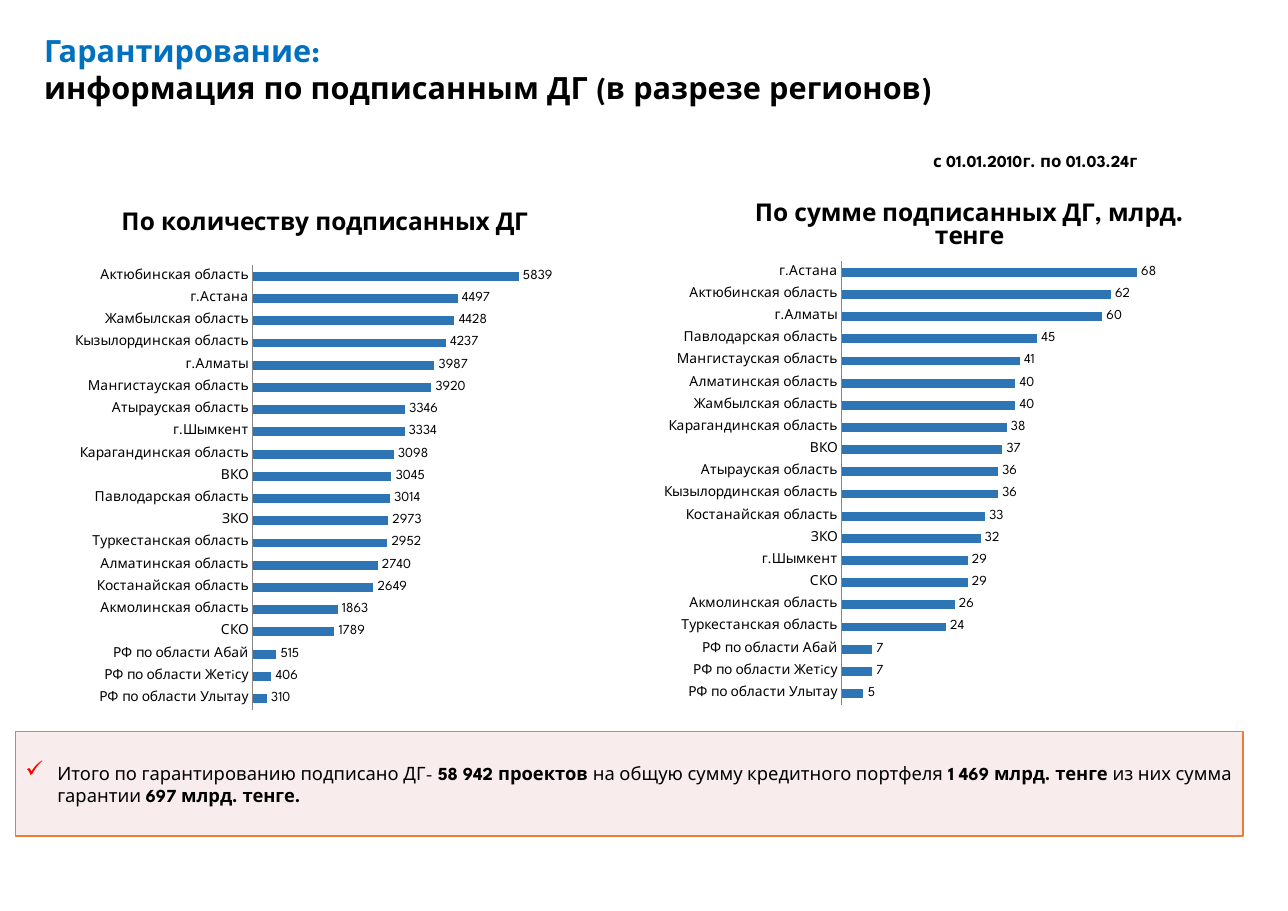
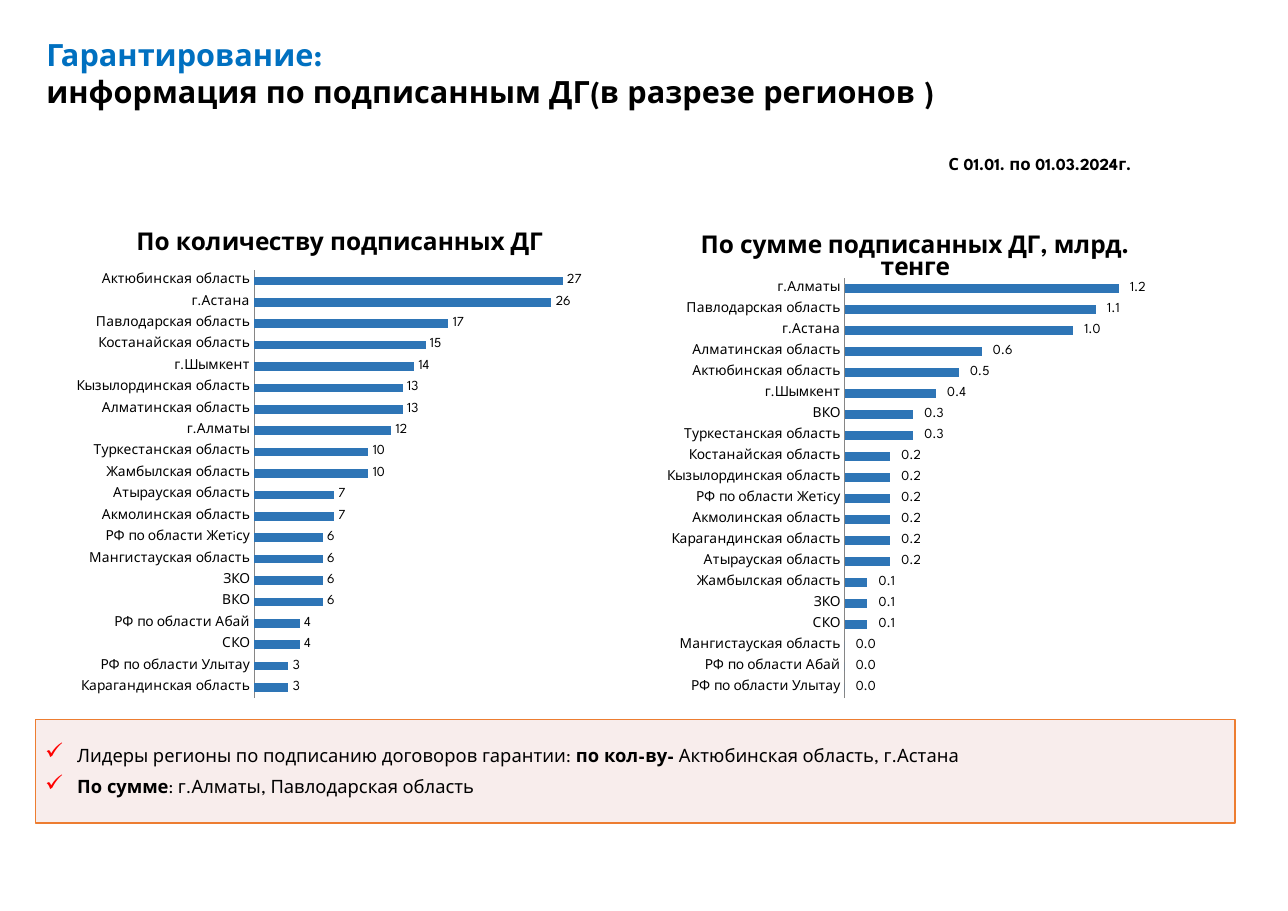
from dataclasses import dataclass

from lxml.etree import SubElement
from pptx import Presentation
from pptx.chart.data import CategoryChartData
from pptx.dml.color import RGBColor
from pptx.enum.chart import XL_CHART_TYPE as ChartType
from pptx.enum.chart import XL_LABEL_POSITION as LabelPosition
from pptx.enum.chart import XL_TICK_MARK as TickMark
from pptx.enum.shapes import MSO_SHAPE as Preset
from pptx.enum.text import MSO_ANCHOR as Anchor
from pptx.enum.text import MSO_AUTO_SIZE as AutoSize
from pptx.enum.text import PP_ALIGN as Align
from pptx.oxml import parse_xml
from pptx.oxml.ns import nsdecls, qn
from pptx.util import Inches, Pt


@dataclass(frozen=True)
class Theme:
    font: str = "League Spartan"
    chart_font: str = "Calibri"
    black: RGBColor = RGBColor(0x00, 0x00, 0x00)
    blue: RGBColor = RGBColor(0x00, 0x70, 0xC0)
    bar: RGBColor = RGBColor(0x2E, 0x75, 0xB6)
    axis: RGBColor = RGBColor(0x86, 0x86, 0x86)
    band: RGBColor = RGBColor(0xF2, 0xDC, 0xDB)
    border: RGBColor = RGBColor(0xED, 0x7D, 0x31)
    check: str = "FF0000"
    title_size: int = 20
    chart_title_size: int = 16
    body_size: int = 12
    period_size: int = 11
    label_size: int = 9


THEME = Theme()


@dataclass(frozen=True)
class Area:
    left: float
    top: float
    width: float
    height: float

    def inches(self) -> tuple:
        return tuple(Inches(n) for n in (self.left, self.top, self.width, self.height))


@dataclass(frozen=True)
class RegionChart:
    title: str
    area: Area
    plot: Area  # fractions of the chart
    maximum: float
    regions: dict  # from top to bottom
    number_format: str = "General"
    title_at: tuple = ()  # fractions of the chart


@dataclass(frozen=True)
class RegionPage:
    subtitle: str
    title_area: Area
    period: str
    period_area: Area
    charts: tuple
    summary_area: Area
    summary: tuple  # paragraphs of (text, bold)


COUNT_TITLE = "По количеству подписанных ДГ"
SUM_TITLE = "По сумме подписанных ДГ, млрд. тенге"

# Content
PAGES = (
    RegionPage(
        subtitle="информация по подписанным ДГ (в разрезе регионов)",
        title_area=Area(0.3, 0.24, 8.39, 0.77),
        period="с 01.01.2010г. по 01.03.24г",
        period_area=Area(8.37, 1.32, 2.17, 0.29),
        charts=(
            RegionChart(
                COUNT_TITLE, Area(0.22, 1.72, 5.46, 4.92),
                Area(0.38, 0.14, 0.53, 0.82), 7000,
                {
                    "Актюбинская область": 5839, "г.Астана": 4497,
                    "Жамбылская область": 4428, "Кызылординская область": 4237,
                    "г.Алматы": 3987, "Мангистауская область": 3920,
                    "Атырауская область": 3346, "г.Шымкент": 3334,
                    "Карагандинская область": 3098, "ВКО": 3045,
                    "Павлодарская область": 3014, "ЗКО": 2973,
                    "Туркестанская область": 2952, "Алматинская область": 2740,
                    "Костанайская область": 2649, "Акмолинская область": 1863,
                    "СКО": 1789, "РФ по области Абай": 515,
                    "РФ по области Жетiсу": 406, "РФ по области Улытау": 310,
                },
            ),
            RegionChart(
                SUM_TITLE, Area(5.76, 1.79, 5.53, 4.85),
                Area(0.34, 0.12, 0.57, 0.83), 80,
                {
                    "г.Астана": 68, "Актюбинская область": 62,
                    "г.Алматы": 60, "Павлодарская область": 45,
                    "Мангистауская область": 41, "Алматинская область": 40,
                    "Жамбылская область": 40, "Карагандинская область": 38,
                    "ВКО": 37, "Атырауская область": 36,
                    "Кызылординская область": 36, "Костанайская область": 33,
                    "ЗКО": 32, "г.Шымкент": 29,
                    "СКО": 29, "Акмолинская область": 26,
                    "Туркестанская область": 24, "РФ по области Абай": 7,
                    "РФ по области Жетiсу": 7, "РФ по области Улытау": 5,
                },
                "#,##0", (0.19, 0),
            ),
        ),
        summary_area=Area(0.14, 6.64, 11.14, 0.95),
        summary=(
            (
                ("Итого по гарантированию подписано ДГ- ", False),
                ("58 942 проектов ", True),
                ("на общую сумму кредитного портфеля ", False),
                ("1 469 млрд. тенге ", True),
                ("из них сумма гарантии ", False),
                ("697 млрд. тенге.", True),
            ),
        ),
    ),
    RegionPage(
        subtitle="информация по подписанным ДГ(в разрезе регионов )",
        title_area=Area(0.32, 0.28, 8.3, 0.77),
        period="С 01.01. по 01.03.2024г.",
        period_area=Area(8.51, 1.35, 1.96, 0.29),
        charts=(
            RegionChart(
                COUNT_TITLE, Area(0.4, 1.91, 5.37, 4.6),
                Area(0.355, 0.118, 0.58, 0.845), 30,
                {
                    "Актюбинская область": 27, "г.Астана": 26,
                    "Павлодарская область": 17, "Костанайская область": 15,
                    "г.Шымкент": 14, "Кызылординская область": 13,
                    "Алматинская область": 13, "г.Алматы": 12,
                    "Туркестанская область": 10, "Жамбылская область": 10,
                    "Атырауская область": 7, "Акмолинская область": 7,
                    "РФ по области Жетiсу": 6, "Мангистауская область": 6,
                    "ЗКО": 6, "ВКО": 6,
                    "РФ по области Абай": 4, "СКО": 4,
                    "РФ по области Улытау": 3, "Карагандинская область": 3,
                },
            ),
            RegionChart(
                SUM_TITLE, Area(5.4, 1.93, 5.81, 4.57),
                Area(0.39, 0.13, 0.5, 0.835), 1.4,
                {
                    "г.Алматы": 1.2, "Павлодарская область": 1.1,
                    "г.Астана": 1.0, "Алматинская область": 0.6,
                    "Актюбинская область": 0.5, "г.Шымкент": 0.4,
                    "ВКО": 0.3, "Туркестанская область": 0.3,
                    "Костанайская область": 0.2, "Кызылординская область": 0.2,
                    "РФ по области Жетiсу": 0.2, "Акмолинская область": 0.2,
                    "Карагандинская область": 0.2, "Атырауская область": 0.2,
                    "Жамбылская область": 0.1, "ЗКО": 0.1,
                    "СКО": 0.1, "Мангистауская область": 0,
                    "РФ по области Абай": 0, "РФ по области Улытау": 0,
                },
                r"_-* #\ ##0.0_р_._-;\-* #\ ##0.0_р_._-",
            ),
        ),
        summary_area=Area(0.32, 6.53, 10.89, 0.94),
        summary=(
            (
                ("Лидеры регионы по подписанию договоров гарантии: ", False),
                ("по кол-ву-", True),
                (" Актюбинская область, г.Астана", False),
            ),
            (("По сумме", True), (": г.Алматы, Павлодарская область", False)),
        ),
    ),
)


def set_font(font, size: float, bold: bool | None = None, color: RGBColor = THEME.black,
             name: str = THEME.font) -> None:
    font.name, font.size, font.bold = name, Pt(size), bold
    font.color.rgb = color


def add_title(page, subtitle: str, area: Area) -> None:
    title = page.shapes.title
    title.left, title.top, title.width, title.height = area.inches()
    frame = title.text_frame
    frame.word_wrap = True
    frame.auto_size = AutoSize.SHAPE_TO_FIT_TEXT
    frame.vertical_anchor = Anchor.TOP
    para = frame.paragraphs[0]
    para.alignment = Align.LEFT
    set_font(para.font, THEME.title_size, True)
    topic = para.add_run()
    topic.text = "Гарантирование:"
    topic.font.color.rgb = THEME.blue
    para.add_line_break()
    para.add_run().text = subtitle


def add_period(page, text: str, area: Area) -> None:
    frame = page.shapes.add_textbox(*area.inches()).text_frame
    frame.word_wrap = False
    frame.auto_size = AutoSize.SHAPE_TO_FIT_TEXT
    para = frame.paragraphs[0]
    para.text = text
    set_font(para.font, THEME.period_size, True)


def add_check_bullet(para) -> None:
    props = para._p.get_or_add_pPr()
    props.set("marL", str(Inches(0.3)))
    props.set("indent", str(Inches(-0.29)))
    color = SubElement(props, qn("a:buClr"))
    SubElement(color, qn("a:srgbClr"), val=THEME.check)
    SubElement(props, qn("a:buSzPct"), val="125000")
    SubElement(props, qn("a:buChar"), char="✓")


def add_summary(page, paragraphs: tuple, area: Area) -> None:
    box = page.shapes.add_shape(Preset.RECTANGLE, *area.inches())
    box.shadow.inherit = False
    box.fill.solid()
    box.fill.fore_color.rgb = THEME.band
    fill_color = box.element.spPr.find(qn("a:solidFill"))[0]
    SubElement(fill_color, qn("a:alpha"), val="50000")
    box.line.color.rgb = THEME.border
    box.line.width = Pt(1)
    frame = box.text_frame
    frame.word_wrap = True
    frame.vertical_anchor = Anchor.MIDDLE
    frame.margin_left = frame.margin_right = Inches(0.08)
    frame.margin_top = frame.margin_bottom = Inches(0.04)
    for index, spans in enumerate(paragraphs):
        para = frame.add_paragraph() if index else frame.paragraphs[0]
        add_check_bullet(para)
        para.alignment = Align.LEFT
        para.space_after = Pt(6)
        set_font(para.font, THEME.body_size)
        for text, bold in spans:
            span = para.add_run()
            span.text = text
            span.font.bold = bold


def place(parent, index: int, values: dict) -> None:
    """Give a chart part a manual layout in fractions of the chart."""
    for old in parent.findall(qn("c:layout")):
        parent.remove(old)
    settings = "".join(f'<c:{key} val="{value}"/>' for key, value in values.items())
    parent.insert(index, parse_xml(
        f'<c:layout {nsdecls("c")}><c:manualLayout>{settings}</c:manualLayout></c:layout>'))


def add_region_chart(page, spec_chart: RegionChart) -> None:
    data = CategoryChartData()
    data.categories = list(reversed(spec_chart.regions))
    data.add_series("Series 1", list(reversed(spec_chart.regions.values())))
    chart = page.shapes.add_chart(
        ChartType.BAR_CLUSTERED, *spec_chart.area.inches(), data).chart
    set_font(chart.font, THEME.label_size, name=THEME.chart_font)
    chart.has_legend = False

    # Chart title and plot area
    chart.has_title = True
    para = chart.chart_title.text_frame.paragraphs[0]
    para.text = spec_chart.title
    set_font(para.font, THEME.chart_title_size, True)
    edges = {"xMode": "edge", "yMode": "edge"}
    if spec_chart.title_at:
        left, top = spec_chart.title_at
        place(chart.chart_title.element, 1, {**edges, "x": left, "y": top})
    plot_area = spec_chart.plot
    place(chart.element.find(".//" + qn("c:plotArea")), 0, {
        "layoutTarget": "inner", **edges, "x": plot_area.left, "y": plot_area.top,
        "w": plot_area.width, "h": plot_area.height})

    # Axes
    regions, values = chart.category_axis, chart.value_axis
    regions.major_tick_mark = TickMark.NONE
    regions.format.line.color.rgb = THEME.axis
    set_font(regions.tick_labels.font, THEME.label_size)
    values.minimum_scale, values.maximum_scale = 0, spec_chart.maximum
    values.has_major_gridlines = False
    values.visible = False

    # Bars and labels
    plot = chart.plots[0]
    plot.gap_width = 150
    plot.vary_by_categories = False
    bars = plot.series[0]
    bars.format.fill.solid()
    bars.format.fill.fore_color.rgb = THEME.bar
    labels = bars.data_labels
    labels.show_value = True
    labels.position = LabelPosition.OUTSIDE_END
    labels.number_format = spec_chart.number_format
    labels.number_format_is_linked = False
    set_font(labels.font, THEME.label_size)


def main() -> None:
    deck = Presentation()
    deck.slide_width, deck.slide_height = Inches(11.69), Inches(8.27)
    for content in PAGES:
        page = deck.slides.add_slide(deck.slide_layouts[5])
        add_title(page, content.subtitle, content.title_area)
        add_period(page, content.period, content.period_area)
        add_summary(page, content.summary, content.summary_area)
        for region_chart in content.charts:
            add_region_chart(page, region_chart)
    deck.save("out.pptx")


if __name__ == "__main__":
    main()
